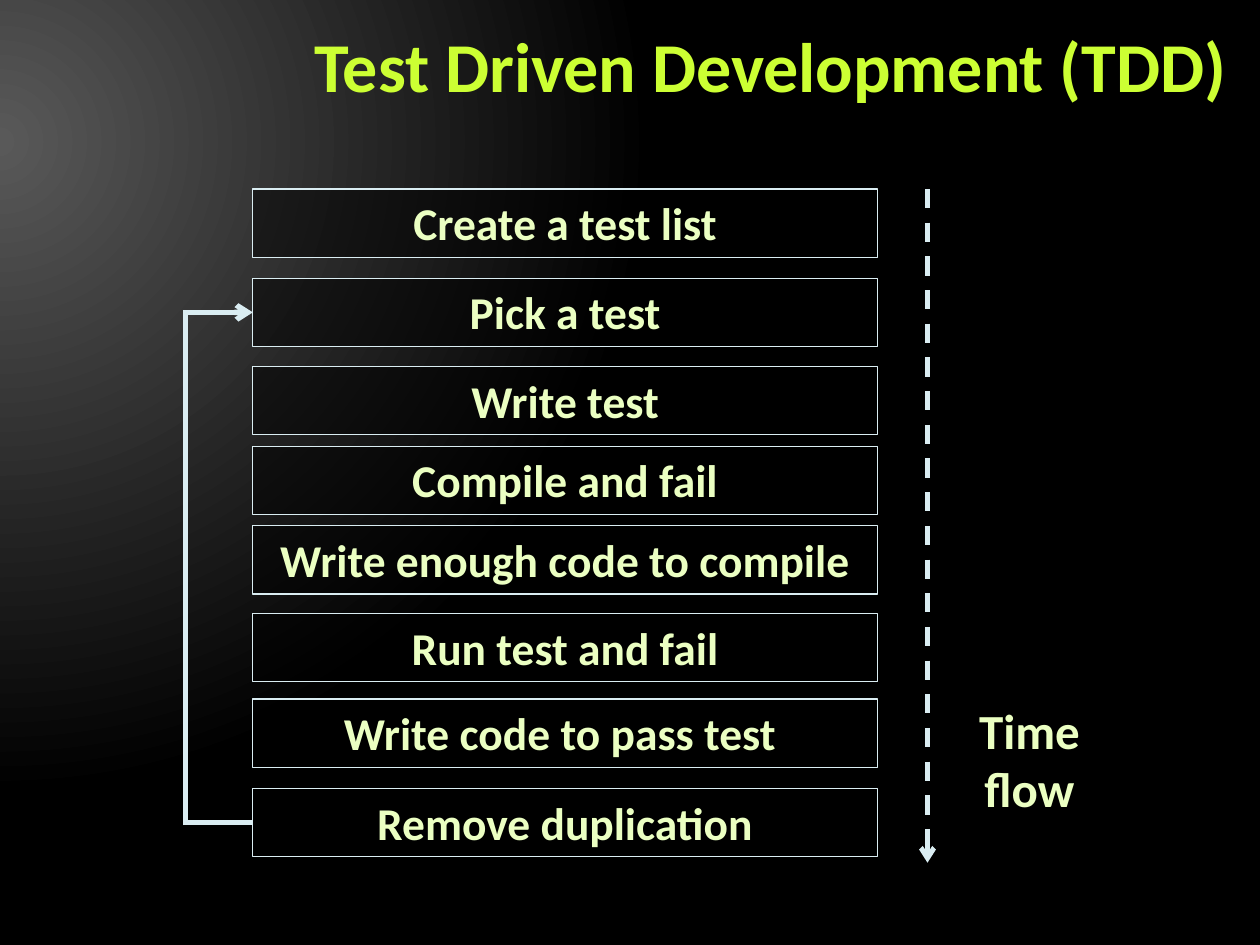
from dataclasses import dataclass

from lxml import etree
from pptx import Presentation
from pptx import util as u
from pptx.dml.color import RGBColor
from pptx.enum import dml, shapes, text
from pptx.oxml.ns import qn

COLORS = {
    "black": "000000", "glow": "595959", "blue": "000D9E", "dark": "262626",
    "line": "DAEDF2", "text": "EBFFC2", "title": "CCFF33",
}
FONT = "Calibri"
W, H = 720, 540
BOX_LEFT, BOX_W, BOX_H = 144.5, 357, 39
LOOP_X, TIME_X = 106, 530


@dataclass
class Wave:
    """Band under a curve running from the left edge to the right edge."""
    top: float
    height: float
    left_y: float
    controls: tuple
    edge: str


@dataclass
class Step:
    label: str
    top: float


WAVES = [
    Wave(32.4, 437.8, 95.8, ((360, 95.8), (384.5, -54)), "dark"),
    Wave(48.2, 352.8, 95.8, ((360, 95.8), (430.5, -35.3)), "glow"),
]
STEPS = [
    Step("Create a test list", 108),
    Step("Pick а test", 159),
    Step("Write test", 209.5),
    Step("Compile and fail", 255),
    Step("Write enough code to compile", 300.5),
    Step("Run test and fail", 350.5),
    Step("Write code to pass test ", 399.5),
    Step("Remove duplication", 450.5),
]
LOOP_START, LOOP_END = 7, 1


def rgb(name: str) -> RGBColor:
    return RGBColor.from_string(COLORS[name])


def add_xml(parent, tag: str, **attrs):
    return etree.SubElement(parent, qn(f"a:{tag}"), attrs)


def set_gradient(grad, stops: list):
    """Replace the stops with (percent, colour name, opacity percent)."""
    grad.clear()
    grad.set("rotWithShape", "1")
    gs_list = add_xml(grad, "gsLst")
    for pos, color, opacity in stops:
        stop = add_xml(gs_list, "gs", pos=str(pos * 1000))
        clr = add_xml(stop, "srgbClr", val=COLORS[color])
        if opacity < 100:
            add_xml(clr, "alpha", val=str(opacity * 1000))


def paint_background(s):
    s.background.fill.gradient()
    grad = s._element.find(".//" + qn("a:gradFill"))
    set_gradient(grad, [(0, "glow", 100), (83, "black", 100)])
    focus = add_xml(grad, "path", path="circle")
    add_xml(focus, "fillToRect", l="20000", t="30000", r="135000", b="100000")


def add_wave(s, wave: Wave):
    """Draw the band upside down and turn it by 180 degrees."""
    def turned(x, y):
        return W - x, wave.height + wave.top - y

    curve = [turned(*pt) for pt in wave.controls] + [turned(W, wave.top)]
    fb = s.shapes.build_freeform(0, 0, scale=u.Pt(1))
    fb.add_line_segments([(W, 0), turned(0, wave.left_y), curve[-1]])
    sp = fb.convert_to_shape(0, u.Pt(wave.top))
    edge = sp._element.findall(".//" + qn("a:lnTo"))[2]
    bezier = etree.Element(qn("a:cubicBezTo"))
    for x, y in curve:
        add_xml(bezier, "pt", x=str(int(u.Pt(x))), y=str(int(u.Pt(y))))
    edge.getparent().replace(edge, bezier)
    sp.rotation = 180
    sp.shadow.inherit = False
    sp.line.fill.background()
    sp.fill.gradient()
    grad = sp._element.spPr.find(qn("a:gradFill"))
    set_gradient(grad, [(65, "blue", 0), (100, wave.edge, 100)])
    add_xml(grad, "lin", ang=str(80 * 60000), scaled="0")


def write(sp, label: str, size: float, color: str, align, grow: bool = True):
    tf = sp.text_frame
    tf.word_wrap = True
    if grow:
        tf.auto_size = text.MSO_AUTO_SIZE.SHAPE_TO_FIT_TEXT
    p = tf.paragraphs[0]
    p.alignment = align
    r = p.add_run()
    r.text = label
    r.font.size = u.Pt(size)
    r.font.bold = True
    r.font.color.rgb = rgb(color)
    r.font.name = FONT
    return p, r


def add_step(s, step: Step):
    sp = s.shapes.add_shape(shapes.MSO_SHAPE.RECTANGLE, u.Pt(BOX_LEFT),
                            u.Pt(step.top), u.Pt(BOX_W), u.Pt(BOX_H))
    sp.shadow.inherit = False
    sp.fill.solid()
    sp.fill.fore_color.rgb = rgb("black")
    add_xml(sp._element.spPr.find(".//" + qn("a:srgbClr")), "alpha", val="50000")
    sp.line.color.rgb = rgb("line")
    sp.line.width = u.Pt(0.75)
    sp.text_frame.vertical_anchor = text.MSO_ANCHOR.TOP
    write(sp, step.label, 26, "text", text.PP_ALIGN.CENTER)
    return sp


def add_line(s, start: tuple, end: tuple, width: float = 3,
             arrow: bool = False, dash: bool = False):
    cx = s.shapes.add_connector(shapes.MSO_CONNECTOR.STRAIGHT,
                                *(u.Pt(v) for v in start + end))
    cx.line.color.rgb = rgb("line")
    cx.line.width = u.Pt(width)
    if dash:
        cx.line.dash_style = dml.MSO_LINE.DASH
    if arrow:
        add_xml(cx.line._get_or_add_ln(), "tailEnd", type="arrow")
    add_xml(cx._element.spPr, "effectLst")
    return cx


def add_title(s, label: str):
    sp = s.shapes.add_textbox(u.Pt(144), u.Pt(9.5), u.Pt(564), u.Pt(62.5))
    sp.text_frame.vertical_anchor = text.MSO_ANCHOR.MIDDLE
    p, r = write(sp, label, 40, "title", text.PP_ALIGN.RIGHT, grow=False)
    p.line_spacing = u.Pt(40)
    effects = etree.Element(qn("a:effectLst"))
    shadow = add_xml(effects, "outerShdw", dist="38100", dir="2700000")
    add_xml(shadow, "srgbClr", val=COLORS["black"])
    r._r.rPr.find(qn("a:solidFill")).addnext(effects)


def main():
    prs = Presentation()
    prs.slide_width, prs.slide_height = u.Pt(W), u.Pt(H)
    s = prs.slides.add_slide(prs.slide_layouts[6])
    paint_background(s)
    for wave in WAVES * 2:
        add_wave(s, wave)
    add_title(s, "Test Driven Development (TDD)")

    boxes = [add_step(s, step) for step in STEPS]
    low, high = (STEPS[i].top + BOX_H / 2 for i in (LOOP_START, LOOP_END))
    add_line(s, (LOOP_X, low + 1.5), (LOOP_X, high - 1.5))
    out = add_line(s, (LOOP_X, low), (BOX_LEFT, low))
    out.end_connect(boxes[LOOP_START], 1)
    back = add_line(s, (LOOP_X, high), (BOX_LEFT, high), arrow=True)
    back.end_connect(boxes[LOOP_END], 1)

    add_line(s, (TIME_X, 108), (TIME_X, 493), 2.75, arrow=True, dash=True)
    sp = s.shapes.add_textbox(u.Pt(541.5), u.Pt(396.5), u.Pt(93.5), u.Pt(74))
    write(sp, "Time flow", 28, "text", text.PP_ALIGN.CENTER)
    prs.save("out.pptx")


if __name__ == "__main__":
    main()
